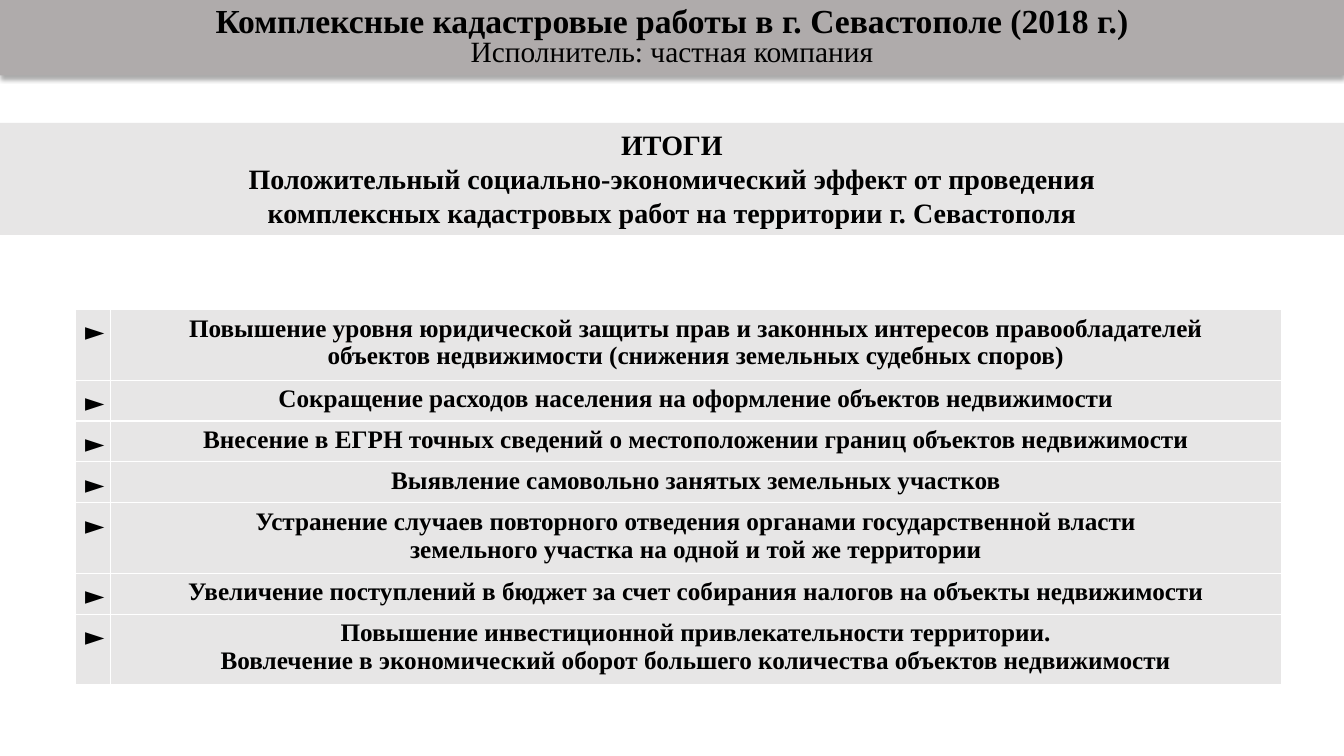
from lxml import etree
from pptx import Presentation
from pptx.dml.color import RGBColor
from pptx.enum.shapes import MSO_SHAPE
from pptx.enum.text import MSO_ANCHOR, MSO_AUTO_SIZE, PP_ALIGN
from pptx.oxml import parse_xml
from pptx.oxml.ns import nsdecls, qn
from pptx.util import Cm, Pt

RECTANGLE = MSO_SHAPE.RECTANGLE
TOP, MIDDLE = MSO_ANCHOR.TOP, MSO_ANCHOR.MIDDLE
GROW = MSO_AUTO_SIZE.SHAPE_TO_FIT_TEXT
LEFT, CENTER = PP_ALIGN.LEFT, PP_ALIGN.CENTER

BLACK = RGBColor(0x00, 0x00, 0x00)
WHITE = RGBColor(0xFF, 0xFF, 0xFF)
LIGHT_GRAY = RGBColor(0xE7, 0xE6, 0xE6)
HEADER_GRAY = RGBColor(0xAF, 0xAB, 0xAB)

SERIF = "Times New Roman"
SLAB = "Roboto Slab"
SLIDE_WIDTH, SLIDE_HEIGHT = Cm(33.87), Cm(19.05)

EFFECTS = [
    "Повышение уровня юридической защиты прав и законных интересов правообладателей\n"
    "объектов недвижимости (снижения земельных судебных споров)",
    "Сокращение расходов населения на оформление объектов недвижимости",
    "Внесение в ЕГРН точных сведений о местоположении границ объектов недвижимости",
    "Выявление самовольно занятых земельных участков",
    "Устранение случаев повторного отведения органами государственной власти\n"
    "земельного участка на одной и той же территории",
    "Увеличение поступлений в бюджет за счет собирания налогов на объекты недвижимости",
    "Повышение инвестиционной привлекательности территории.\n"
    "Вовлечение в экономический оборот большего количества объектов недвижимости",
]


def add_text(paragraph, text, size=18, font=SERIF, bold=True, align=CENTER):
    paragraph.alignment = align
    for index, line in enumerate(text.split("\n")):
        if index:
            paragraph.add_line_break()
        run = paragraph.add_run()
        run.text = line
        run.font.name = font
        run.font.size = Pt(size)
        run.font.bold = bold
        run.font.color.rgb = BLACK


def add_band(slide, top, height, color, anchor):
    band = slide.shapes.add_shape(RECTANGLE, 0, top, SLIDE_WIDTH, height)
    band.shadow.inherit = False
    band.fill.solid()
    band.fill.fore_color.rgb = color
    band.line.fill.background()
    band.text_frame.word_wrap = True
    band.text_frame.vertical_anchor = anchor
    return band


def add_shadow(band):
    effects = band._element.spPr.find(qn("a:effectLst"))
    effects.append(parse_xml(
        f'<a:outerShdw {nsdecls("a")} blurRad="{Pt(3.5)}" dist="{Pt(2.2)}" '
        'dir="5400000" rotWithShape="0"><a:srgbClr val="000000">'
        '<a:alpha val="32000"/></a:srgbClr></a:outerShdw>'
    ))


def format_cell(cell):
    properties = cell._tc.get_or_add_tcPr()
    for side in ("lnL", "lnR", "lnT", "lnB"):
        border = etree.SubElement(properties, qn(f"a:{side}"), w=str(Pt(1)))
        fill = etree.SubElement(border, qn("a:solidFill"))
        etree.SubElement(fill, qn("a:srgbClr"), val=str(WHITE))
    cell.fill.solid()
    cell.fill.fore_color.rgb = LIGHT_GRAY


def add_summary(slide):
    summary = add_band(slide, Cm(3.1), Cm(2.82), LIGHT_GRAY, TOP)
    frame = summary.text_frame
    frame.auto_size = GROW
    add_text(frame.paragraphs[0], "ИТОГИ", size=20)
    add_text(
        frame.add_paragraph(),
        "Положительный социально-экономический эффект от проведения\n"
        "комплексных кадастровых работ на территории г. Севастополя",
        size=20,
    )


def add_effects_table(slide):
    row_height = Cm(1.03)
    table = slide.shapes.add_table(
        len(EFFECTS), 2, Cm(1.89), Cm(7.8), Cm(30.4), row_height * len(EFFECTS)
    ).table
    table.columns[0].width = Cm(0.89)
    table.columns[1].width = Cm(29.51)
    table.first_row = False
    table.horz_banding = False
    for row, effect in zip(table.rows, EFFECTS):
        row.height = row_height
        marker, description = row.cells
        format_cell(marker)
        format_cell(description)
        add_text(marker.text_frame.paragraphs[0], "►",
                 font=SLAB, bold=False, align=LEFT)
        frame = description.text_frame
        for index, line in enumerate(effect.split("\n")):
            paragraph = frame.add_paragraph() if index else frame.paragraphs[0]
            add_text(paragraph, line)


def add_header(slide):
    header = add_band(slide, 0, Cm(1.9), HEADER_GRAY, MIDDLE)
    add_shadow(header)
    title = header.text_frame.paragraphs[0]
    title.line_spacing = 0.8
    add_text(title, "Комплексные кадастровые работы в г. Севастополе (2018 г.)", size=24)
    title.add_line_break()
    add_text(title, "Исполнитель: частная компания", size=21, bold=False)


def main():
    presentation = Presentation()
    presentation.slide_width = SLIDE_WIDTH
    presentation.slide_height = SLIDE_HEIGHT
    slide = presentation.slides.add_slide(presentation.slide_layouts[6])
    add_summary(slide)
    add_effects_table(slide)
    add_header(slide)
    presentation.save("out.pptx")


if __name__ == "__main__":
    main()
